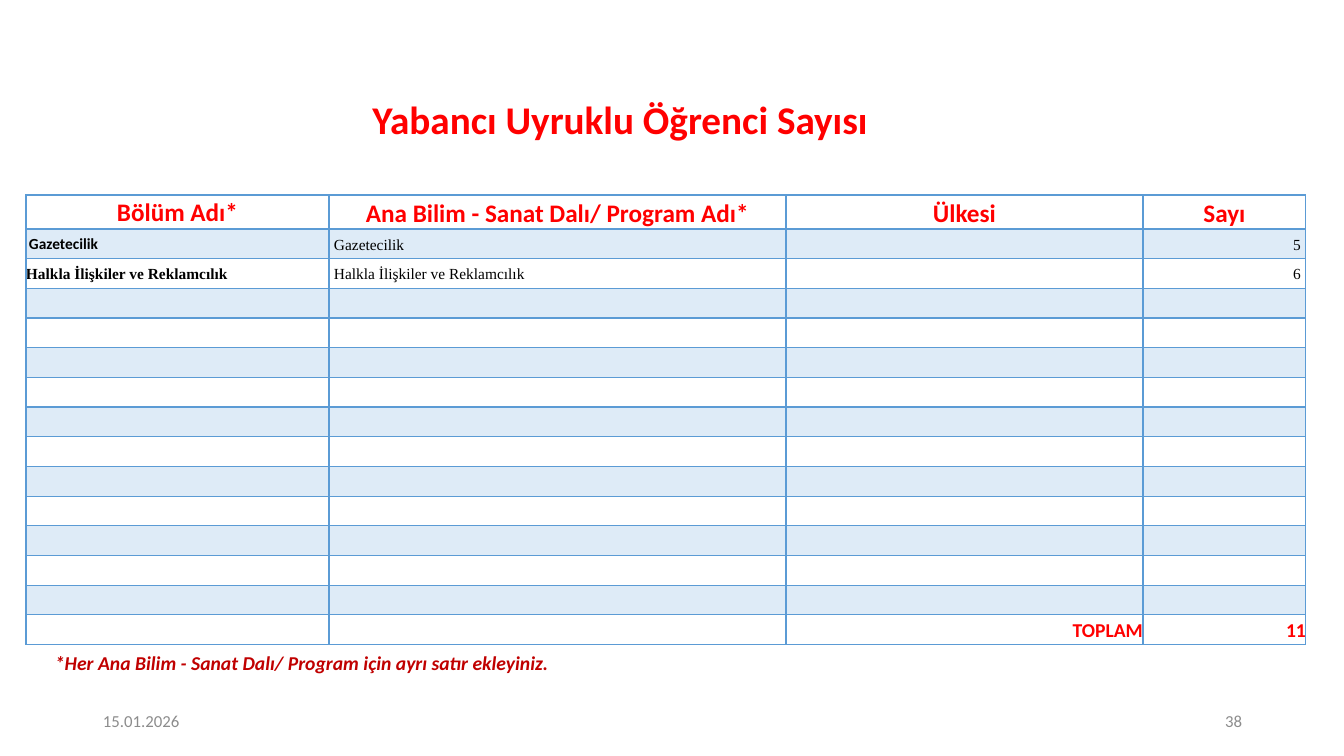
from lxml.etree import SubElement
from pptx import Presentation
from pptx.dml.color import RGBColor
from pptx.enum.text import MSO_ANCHOR, PP_ALIGN
from pptx.oxml.ns import qn
from pptx.util import Pt

RED = RGBColor(0xFF, 0x00, 0x00)
DARK_RED = RGBColor(0xC0, 0x00, 0x00)
GREY = RGBColor(0x8C, 0x8C, 0x8C)
BLACK = RGBColor(0x00, 0x00, 0x00)
WHITE = RGBColor(0xFF, 0xFF, 0xFF)
BLUE = RGBColor(0x5B, 0x9B, 0xD5)
PALE_BLUE = RGBColor(0xDE, 0xEB, 0xF7)
SANS, SERIF = "Calibri", "Times New Roman"
LEFT, CENTER, RIGHT = PP_ALIGN.LEFT, PP_ALIGN.CENTER, PP_ALIGN.RIGHT

TITLE = "Yabancı Uyruklu Öğrenci Sayısı"
HEADERS = ["Bölüm Adı*", "Ana Bilim - Sanat Dalı/ Program Adı*", "Ülkesi", "Sayı"]
DEPARTMENTS = [
    ["Gazetecilik", "Gazetecilik", "", "5"],
    ["Halkla İlişkiler ve Reklamcılık", "Halkla İlişkiler ve Reklamcılık", "", "6"],
]
EMPTY_ROWS = 11
TOTAL = ["", "", "TOPLAM", "11"]
ROWS = [HEADERS, *DEPARTMENTS, *[[""] * 4] * EMPTY_ROWS, TOTAL]
NOTE = "*Her Ana Bilim - Sanat Dalı/ Program için ayrı satır ekleyiniz."

EMU_PER_PX = 914400 / 100.8
SLIDE_SIZE = (1344, 756)
TITLE_BOX = (52, 94, 1136, 56)
TABLE_BOX = (26, 195, 1280, 450)
COLUMN_WIDTHS = [303, 457, 357, 163]
HEADER_HEIGHT = 34
TEXT_BOXES = [
    ("15.01.2026", (93, 701, 302, 40), MSO_ANCHOR.MIDDLE, LEFT, 12, GREY, False),
    ("38", (950, 701, 302, 40), MSO_ANCHOR.MIDDLE, RIGHT, 12, GREY, False),
    (NOTE, (45, 646, 642, 34), MSO_ANCHOR.TOP, LEFT, 14, DARK_RED, True),
]


def emu(px):
    return round(px * EMU_PER_PX)


def format_paragraph(paragraph, align, size, color, name=SANS, bold=False, italic=False):
    paragraph.alignment = align
    font = paragraph.font
    font.name, font.size, font.bold, font.italic = name, Pt(size), bold, italic
    font.color.rgb = color


def cell_style(row, column):
    if row == 0:
        return CENTER, 18, RED, SANS, True
    if row == len(ROWS) - 1:
        return RIGHT, 14, RED, SANS, True
    align = RIGHT if column == 3 else LEFT
    name = SANS if (row, column) == (1, 0) else SERIF
    return align, 11, BLACK, name, column == 0


def cell_margins(row, column):
    if (row, column) == (1, 0):
        return 3, 0, 0, 0
    if column == 0 or row == len(ROWS) - 1:
        return 0, 0, 0, 0
    return 5, 1, 5, 0


def add_borders(cell, row):
    properties = cell._tc.get_or_add_tcPr()
    for side in ("lnL", "lnR", "lnT", "lnB"):
        thick = (row, side) in ((0, "lnB"), (1, "lnT"))
        line = SubElement(properties, qn(f"a:{side}"), w=str(Pt(2 if thick else 1)))
        fill = SubElement(line, qn("a:solidFill"))
        SubElement(fill, qn("a:srgbClr"), val=str(BLUE))


def fill_cell(cell, text, row, column):
    margins = [emu(px) for px in cell_margins(row, column)]
    cell.margin_left, cell.margin_top, cell.margin_right, cell.margin_bottom = margins
    cell.vertical_anchor = MSO_ANCHOR.MIDDLE
    add_borders(cell, row)
    cell.fill.solid()
    cell.fill.fore_color.rgb = PALE_BLUE if row % 2 else WHITE
    paragraph = cell.text_frame.paragraphs[0]
    if text:
        paragraph.text = text
        paragraph.line_spacing = 1.07
        format_paragraph(paragraph, *cell_style(row, column))
    else:
        SubElement(paragraph._p, qn("a:endParaRPr"), sz="1100")


def add_student_table(slide):
    box = [emu(px) for px in TABLE_BOX]
    table = slide.shapes.add_table(len(ROWS), len(HEADERS), *box).table
    table.first_row = table.horz_banding = False
    for column, width in zip(table.columns, COLUMN_WIDTHS):
        column.width = emu(width)
    body_height = (TABLE_BOX[3] - HEADER_HEIGHT) / (len(ROWS) - 1)
    for row, texts in enumerate(ROWS):
        table.rows[row].height = emu(body_height if row else HEADER_HEIGHT)
        for column, text in enumerate(texts):
            fill_cell(table.cell(row, column), text, row, column)


def add_text(slide, text, box, anchor, align, size, color, emphasis):
    frame = slide.shapes.add_textbox(*[emu(px) for px in box]).text_frame
    frame.word_wrap = True
    frame.vertical_anchor = anchor
    frame.text = text
    format_paragraph(frame.paragraphs[0], align, size, color, bold=emphasis, italic=emphasis)


def main():
    presentation = Presentation()
    presentation.slide_width, presentation.slide_height = [emu(px) for px in SLIDE_SIZE]
    slide = presentation.slides.add_slide(presentation.slide_layouts[5])

    title = slide.shapes.title
    title.left, title.top, title.width, title.height = [emu(px) for px in TITLE_BOX]
    title.text_frame.text = TITLE
    title.text_frame.vertical_anchor = MSO_ANCHOR.MIDDLE
    paragraph = title.text_frame.paragraphs[0]
    paragraph.line_spacing = 0.9
    format_paragraph(paragraph, CENTER, 28, RED, bold=True)

    add_student_table(slide)
    for text_box in TEXT_BOXES:
        add_text(slide, *text_box)
    presentation.save("out.pptx")


if __name__ == "__main__":
    main()
